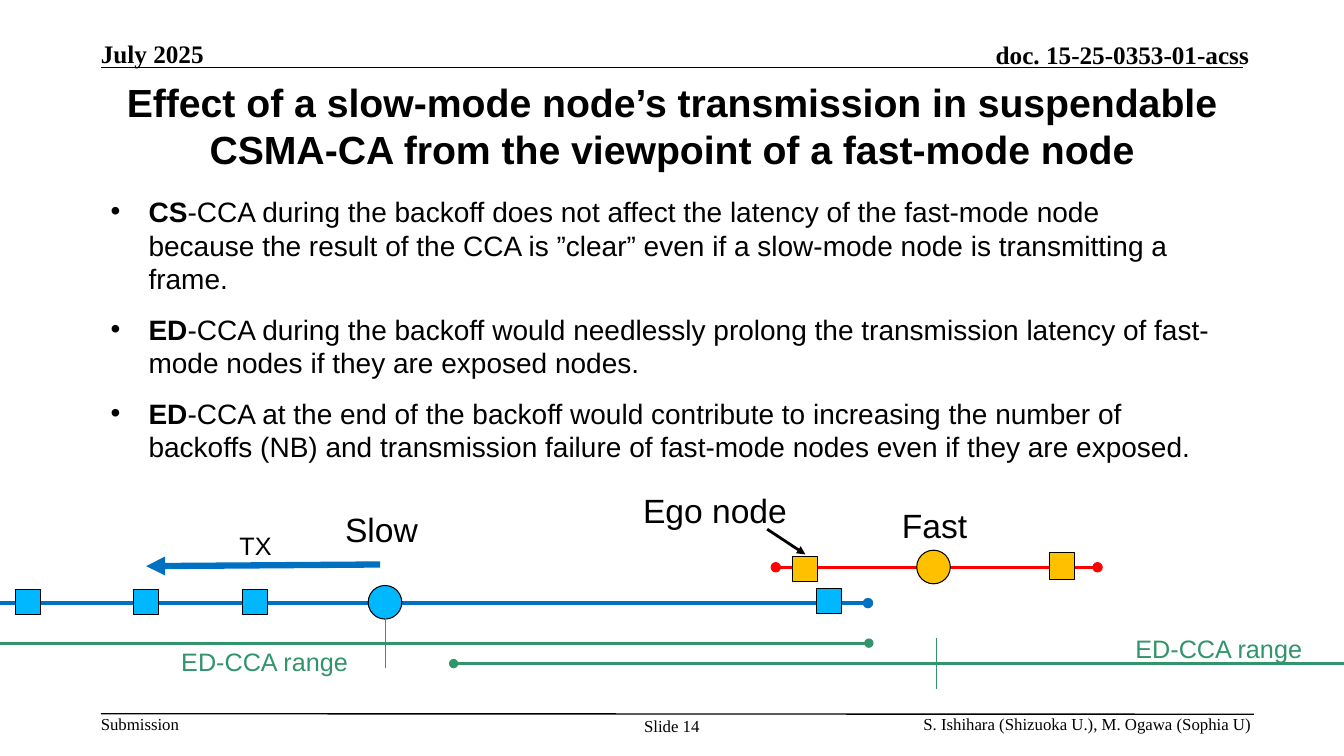
from lxml.etree import SubElement
from pptx import Presentation
from pptx.dml.color import RGBColor
from pptx.enum.shapes import MSO_CONNECTOR as CONN, MSO_SHAPE as SHAPE
from pptx.enum.text import MSO_ANCHOR as ANCHOR, PP_ALIGN as ALIGN
from pptx.oxml.ns import qn
from pptx.util import Pt

BLACK = RGBColor(0x00, 0x00, 0x00)
BLUE = RGBColor(0x00, 0x70, 0xC0)
SKY = RGBColor(0x00, 0xB8, 0xFF)
RED = RGBColor(0xFF, 0x00, 0x00)
AMBER = RGBColor(0xFF, 0xC0, 0x00)
GREEN = RGBColor(0x32, 0x94, 0x6A)
SANS, SERIF = "Arial", "Times New Roman"
INSETS = ("margin_left", "margin_top", "margin_right", "margin_bottom")

TITLE = ("Effect of a slow-mode node’s transmission in suspendable "
         "CSMA-CA from the viewpoint of a fast-mode node")
BULLETS = [
    ("CS", "-CCA during the backoff does not affect the latency of the fast-mode node\v"
           "because the result of the CCA is ”clear” even if a slow-mode node is "
           "transmitting a frame."),
    ("ED", "-CCA during the backoff would needlessly prolong the transmission latency "
           "of fast-mode nodes if they are exposed nodes."),
    ("ED", "-CCA at the end of the backoff would contribute to increasing the number of "
           "backoffs (NB) and transmission failure of fast-mode nodes even if they are exposed."),
]


def set_all(target, values):
    for name, value in values.items():
        setattr(target, name, value)


def add_box(s, box, insets, **frame):
    tf = s.shapes.add_textbox(*map(Pt, box)).text_frame
    set_all(tf, {"word_wrap": True, **dict(zip(INSETS, map(Pt, insets))), **frame})
    return tf


def add_run(p, text, size, font=SANS, color=BLACK, bold=False):
    for i, part in enumerate(text.split("\v")):
        if i:
            p.add_line_break()
        r = p.add_run()
        r.text = part
        set_all(r.font, {"size": Pt(size), "name": font, "bold": bold})
        r.font.color.rgb = color


def add_margin_text(s, text, box, size, align=ALIGN.LEFT, bold=False, anchor=ANCHOR.TOP):
    tf = add_box(s, box, (0, 0, 0, 0), vertical_anchor=anchor)
    p = tf.paragraphs[0]
    p.alignment = align
    add_run(p, text, size, SERIF, bold=bold)


def add_label(s, text, box, size, color=BLACK):
    tf = add_box(s, box, (7.2, 3.6, 7.2, 3.6), word_wrap=False)
    add_run(tf.paragraphs[0], text, size, color=color)


def add_title(s):
    tf = add_box(s, (60, 50.4, 840, 77.8), (7.2, 3.6, 7.2, 3.6),
                 vertical_anchor=ANCHOR.MIDDLE)
    p = tf.paragraphs[0]
    set_all(p, {"alignment": ALIGN.CENTER, "line_spacing": Pt(33.5)})
    add_run(p, TITLE, 28, bold=True)


def add_bullets(s):
    tf = add_box(s, (72, 135.4, 816, 201.6), (7.2, 3.6, 7.2, 3.6))
    for i, (lead, rest) in enumerate(BULLETS):
        p = tf.add_paragraph() if i else tf.paragraphs[0]
        set_all(p, {"space_before": Pt(12), "line_spacing": Pt(24)})
        pPr = p._p.get_or_add_pPr()
        pPr.set("marL", str(Pt(27)))
        pPr.set("indent", str(-Pt(27)))
        SubElement(pPr, qn("a:buFont")).set("typeface", SANS)
        SubElement(pPr, qn("a:buChar")).set("char", "•")
        add_run(p, lead, 20, bold=True)
        add_run(p, rest, 20)


def add_line(s, points, color, width, head=None, tail=None):
    c = s.shapes.add_connector(CONN.STRAIGHT, *map(Pt, points))
    c.line.color.rgb = color
    c.line.width = Pt(width)
    ln = c.line._get_or_add_ln()
    for tag, kind in (("a:headEnd", head), ("a:tailEnd", tail)):
        if kind:
            SubElement(ln, qn(tag)).set("type", kind)
    SubElement(c._element.spPr, qn("a:effectLst"))


def add_node(s, kind, left, top, color, width, height=None):
    sp = s.shapes.add_shape(kind, *map(Pt, (left, top, width, height or width)))
    sp.shadow.inherit = False
    sp.fill.solid()
    sp.fill.fore_color.rgb = color
    sp.line.color.rgb = BLACK
    sp.line.width = Pt(0.75)


def add_header_and_footer(s):
    add_line(s, (72, 48.2, 888, 48.2), BLACK, 1)
    add_line(s, (72, 509.8, 895.7, 510.2), BLACK, 1)
    add_margin_text(s, "July 2025", (72, 27.4, 126, 21.6), 18, bold=True)
    add_margin_text(s, "doc. 15-25-0353-01-acss", (525, 28.1, 367.2, 21.6), 18,
                    ALIGN.RIGHT, True, ANCHOR.BOTTOM)
    add_margin_text(s, "Submission", (72, 509.8, 80, 14.4), 12)
    add_margin_text(s, "Slide 14", (452.2, 511.2, 55.4, 28.8), 12, ALIGN.CENTER)
    add_margin_text(s, "S. Ishihara (Shizuoka U.), M. Ogawa (Sophia U)",
                    (640, 509.8, 253.8, 14.4), 12, ALIGN.RIGHT)


def add_slow_group(s):
    add_line(s, (0, 430.8, 620, 430.8), BLUE, 2.5, tail="oval")
    add_node(s, SHAPE.OVAL, 263, 418.2, SKY, 24)
    for left, top in ((10.8, 421.2), (95.5, 421.2), (173.3, 421.2), (583.2, 420.5)):
        add_node(s, SHAPE.RECTANGLE, left, top, SKY, 18)
    add_label(s, "Slow", (239.4, 360, 67, 36), 24)
    add_line(s, (271.5, 403.2, 104.4, 404.4), BLUE, 4.5, tail="triangle")
    add_label(s, "TX", (164, 375.1, 39, 28.8), 18)


def add_fast_group(s):
    add_line(s, (554.2, 405.2, 784, 405.2), RED, 2.5, "oval", "oval")
    add_node(s, SHAPE.OVAL, 654.8, 393, AMBER, 24)
    add_node(s, SHAPE.RECTANGLE, 566.2, 397.5, AMBER, 18)
    add_node(s, SHAPE.RECTANGLE, 749.5, 394.6, AMBER, 18, 19.2)
    add_label(s, "Fast", (637.2, 357.1, 62, 36), 24)
    add_line(s, (548, 378, 575.3, 396), BLACK, 2, tail="triangle")
    add_label(s, "Ego node", (452.2, 346.3, 118, 36), 24)


def add_range(s, y, left, right, center, label_left, label_top, **ends):
    add_line(s, (left, y, right, y), GREEN, 2.25, **ends)
    add_line(s, (center, y - 18, center, y + 18), GREEN, 0.75)
    add_label(s, "ED-CCA range", (label_left, label_top, 134.6, 28.8), 18, GREEN)


def main():
    prs = Presentation()
    set_all(prs, {"slide_width": Pt(960), "slide_height": Pt(540)})
    s = prs.slides.add_slide(prs.slide_layouts[6])
    add_header_and_footer(s)
    add_title(s)
    add_bullets(s)
    add_slow_group(s)
    add_fast_group(s)
    add_range(s, 474, 324, 960, 668.9, 804, 448.6, head="oval")
    add_range(s, 459.4, 0, 620.6, 275.4, 122.4, 458.2, tail="oval")
    prs.save("out.pptx")


if __name__ == "__main__":
    main()
